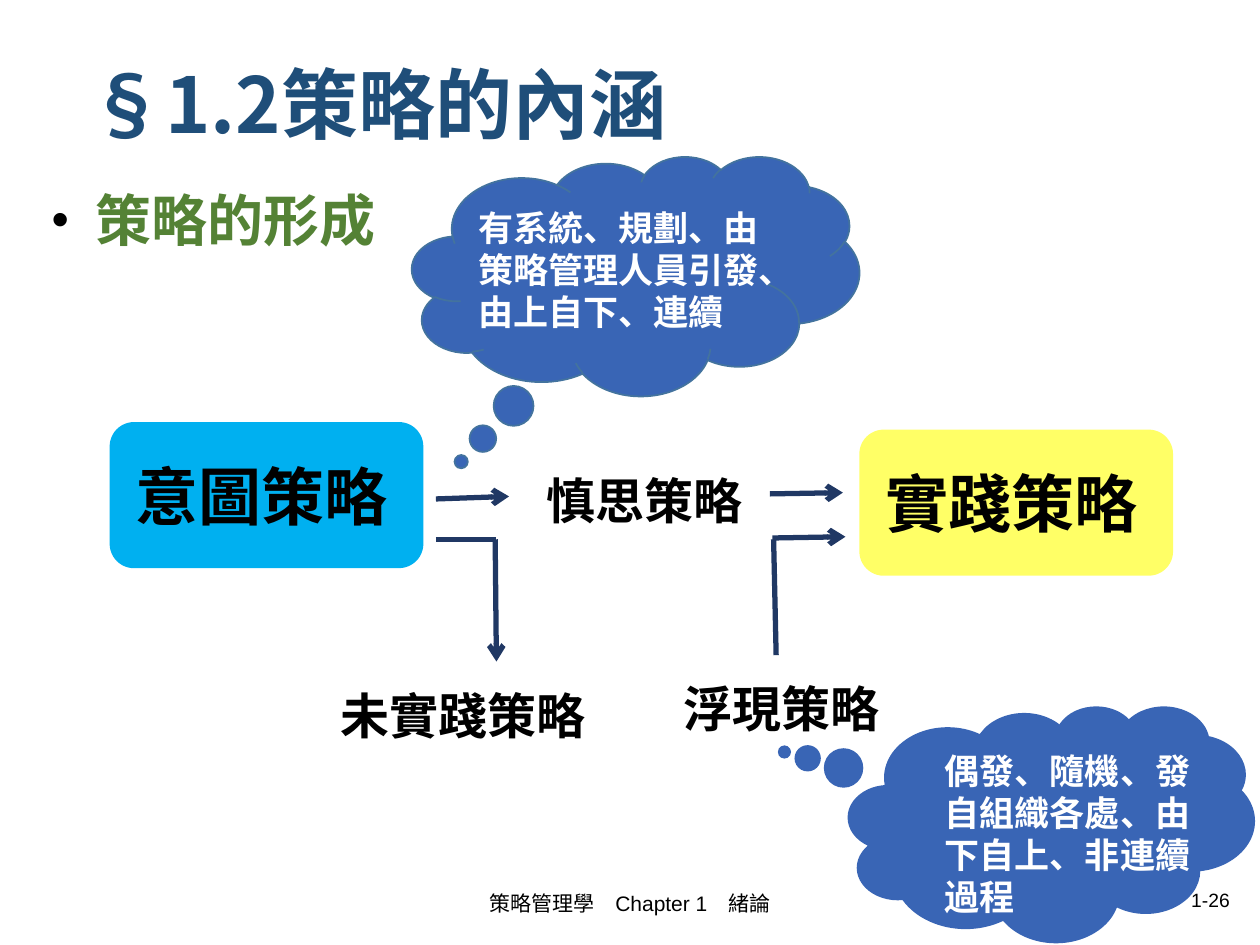
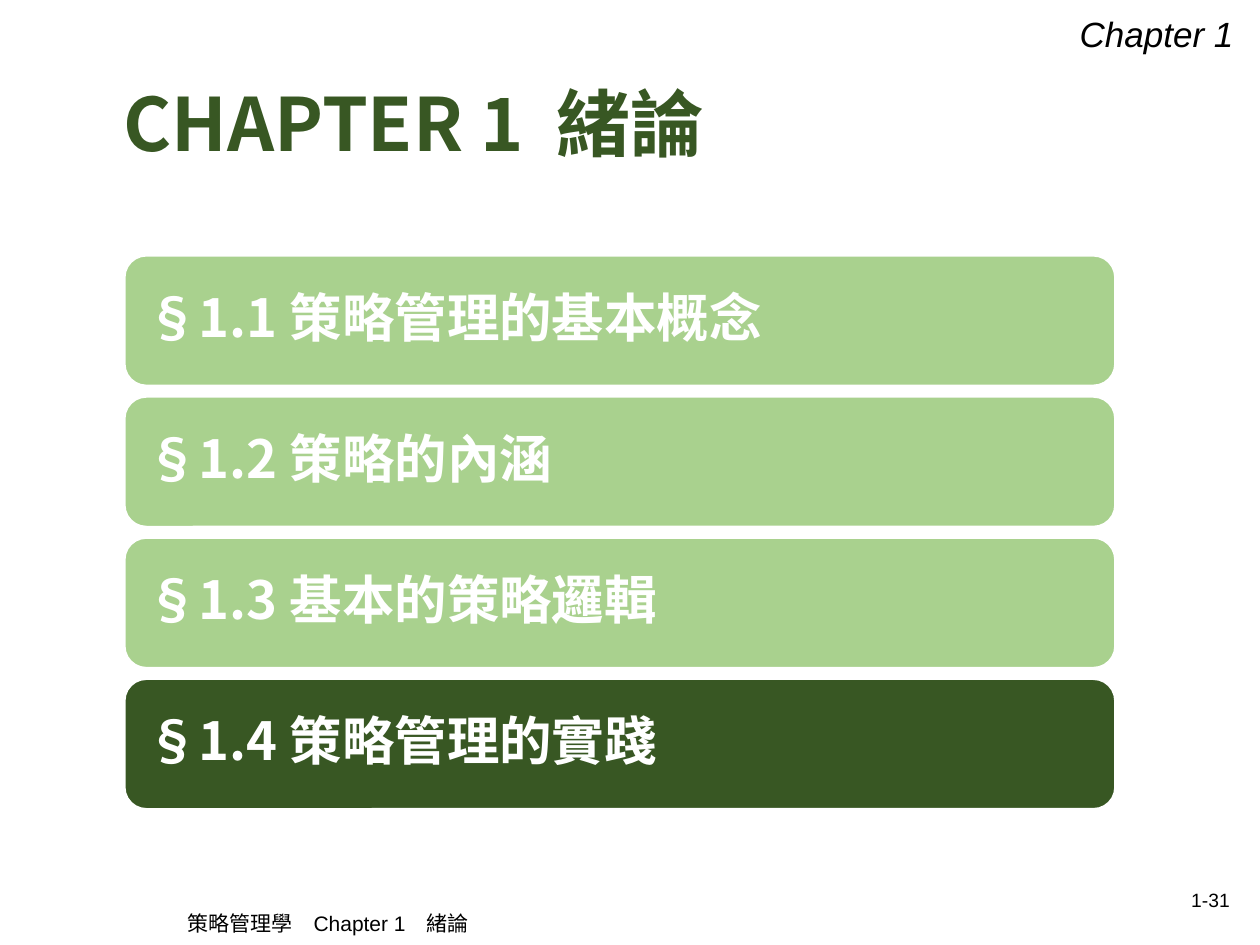
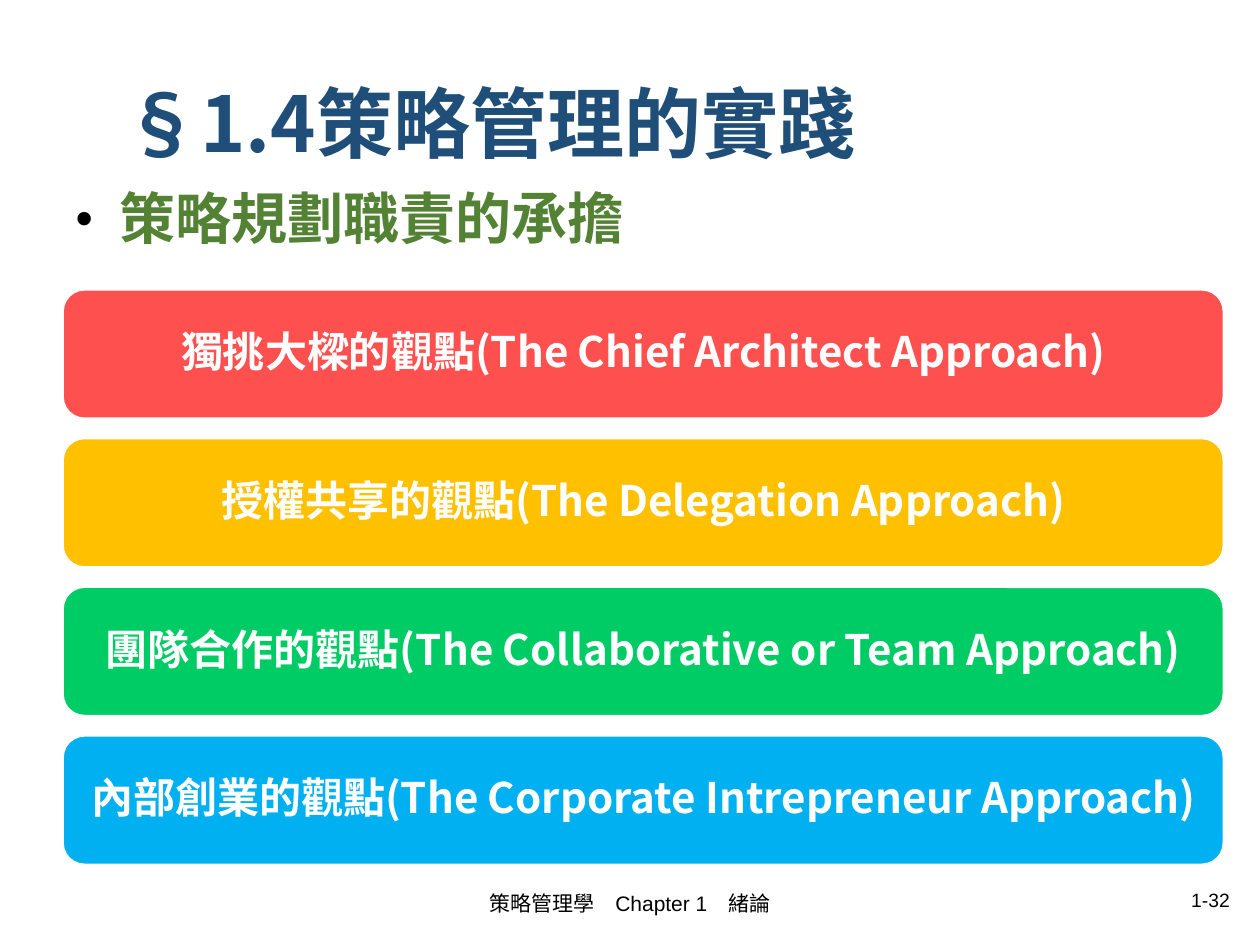
from dataclasses import dataclass

from lxml.etree import SubElement
from pptx import Presentation
from pptx.dml.color import RGBColor
from pptx.enum.shapes import MSO_CONNECTOR as Conn, MSO_SHAPE as Form
from pptx.enum.text import MSO_ANCHOR as Anchor, MSO_AUTO_SIZE as Fit, PP_ALIGN as Align
from pptx.oxml.ns import qn
from pptx.util import Inches, Pt


@dataclass(frozen=True)
class Theme:
    cjk: str = "Noto Sans CJK SC"
    latin: str = "Arial"
    navy: str = "1F4E79"
    green: str = "548235"
    forest: str = "385723"
    leaf: str = "A9D18E"
    sky: str = "00B0F0"
    lemon: str = "FFFF66"
    red: str = "FF5050"
    gold: str = "FFC000"
    mint: str = "00CC66"
    cloud: str = "3965B5"
    rim: str = "43739E"
    arrow: str = "203864"
    black: str = "000000"
    white: str = "FFFFFF"
    title: int = 44
    cover: int = 42
    key: int = 36
    topic: int = 32
    index: int = 30
    label: int = 28
    bar: int = 24
    note: int = 20
    foot: int = 12
    page: int = 11


T = Theme()
COLS, ROWS = 10, 7.5
UNIT = Inches(1)

FOOT = "策略管理學　Chapter 1　緒論"
FOOT_MID = (3.31, 6.97, 3.38, 0.4)
FOOT_LOW = (0.5, 7.16, 4.21, 0.34)
PAGE_BOX = (7.06, 6.99, 2.8, 0.3)
HEAD_BOX = (0.88, 0.6, 8.31, 0.82)

KEYS = [
    ("意圖策略", (0.87, 3.35, 2.49, 1.16), T.sky),
    ("實踐策略", (6.82, 3.41, 2.49, 1.16), T.lemon),
]
LABELS = [
    ("慎思策略", (4.16, 3.68, 1.91, 0.57)),
    ("浮現策略", (5.25, 5.33, 1.91, 0.57)),
    ("未實踐策略", (2.54, 5.39, 2.27, 0.57)),
]
LINES = [
    ((3.46, 3.96), (4.04, 3.94), True),
    ((6.11, 3.92), (6.69, 3.91), True),
    ((3.93, 4.28), (3.94, 5.25), True),
    ((3.46, 4.28), (3.94, 4.28), False),
    ((6.14, 4.28), (6.16, 5.2), False),
    ((6.13, 4.27), (6.71, 4.26), True),
]
CLOUDS = [
    ("有系統、規劃、由策略管理人員引發、由上自下、連續",
     (3.27, 1.24, 3.55, 1.9), (-0.39, 0.776), (3.7, 1.59, 2.47, 1.12), T.rim),
    ("偶發、隨機、發自組織各處、由下自上、非連續過程",
     (6.73, 5.6, 3.23, 1.88), (-0.656, -0.304), (7.4, 5.9, 2.35, 1.45), None),
]
PARTS = [
    ("§1.1 策略管理的基本概念", T.leaf),
    ("§1.2 策略的內涵", T.leaf),
    ("§1.3 基本的策略邏輯", T.leaf),
    ("§1.4 策略管理的實踐", T.forest),
]
VIEWS = [
    ("獨挑大樑的觀點(The Chief Architect Approach)", T.red),
    ("授權共享的觀點(The Delegation Approach)", T.gold),
    ("團隊合作的觀點(The Collaborative or Team Approach)", T.mint),
    ("內部創業的觀點(The Corporate Intrepreneur Approach)", T.sky),
]


def span(*cells):
    return [round(c * UNIT) for c in cells]


def rgb(code):
    return RGBColor.from_string(code)


def write(shape, text, size, color, font=T.cjk, bold=True, italic=False,
          align=Align.LEFT, anchor=Anchor.TOP, lead=None, wrap=True):
    frame = shape.text_frame
    frame.word_wrap = wrap
    frame.auto_size = Fit.NONE
    frame.vertical_anchor = anchor
    para = frame.paragraphs[0]
    para.alignment = align
    para.space_before = Pt(0)
    if lead:
        para.line_spacing = lead
    run = para.add_run()
    run.text = text
    face = run.font
    face.name, face.size, face.bold, face.italic = font, Pt(size), bold, italic
    face.color.rgb = rgb(color)
    east = SubElement(run._r.get_or_add_rPr(), qn("a:ea"))
    east.set("typeface", T.cjk)
    return para


def label(slide, box, *args, **style):
    return write(slide.shapes.add_textbox(*span(*box)), *args, **style)


def draw(slide, form, box, fill, rim=None):
    shape = slide.shapes.add_shape(form, *span(*box))
    shape.shadow.inherit = False
    shape.fill.solid()
    shape.fill.fore_color.rgb = rgb(fill)
    if rim:
        shape.line.color.rgb = rgb(rim)
        shape.line.width = Pt(1)
    else:
        shape.line.fill.background()
    return shape


def place(holder, box):
    holder.left, holder.top, holder.width, holder.height = span(*box)
    return holder


def start(deck, title, page, box=HEAD_BOX, foot=FOOT_MID, topic=None, body=None,
          size=T.title, color=T.navy):
    slide = deck.slides.add_slide(deck.slide_layouts[1 if topic else 5])
    write(place(slide.shapes.title, box), title, size, color,
          anchor=Anchor.MIDDLE, lead=0.9)
    if topic:
        para = write(place(slide.placeholders[1], body), topic, T.topic, T.green, lead=0.9)
        bullet(para)
    plain = dict(font=T.latin, bold=False, anchor=Anchor.MIDDLE)
    label(slide, foot, FOOT, T.foot, T.black, align=Align.CENTER, **plain)
    label(slide, PAGE_BOX, page, T.page, T.black, align=Align.RIGHT, **plain)
    return slide


def bullet(para):
    props = para._p.get_or_add_pPr()
    props.set("marL", str(Inches(0.35)))
    props.set("indent", str(-Inches(0.35)))
    tint = SubElement(props, qn("a:buClr"))
    SubElement(tint, qn("a:srgbClr")).set("val", T.black)
    SubElement(props, qn("a:buSzPct")).set("val", "88000")
    SubElement(props, qn("a:buFont")).set("typeface", T.latin)
    SubElement(props, qn("a:buChar")).set("char", "•")


def link(slide, tail, tip, arrow):
    line = slide.shapes.add_connector(Conn.STRAIGHT, *span(*tail, *tip))
    line.line.color.rgb = rgb(T.arrow)
    line.line.width = Pt(3)
    if arrow:
        SubElement(line.line._get_or_add_ln(), qn("a:tailEnd")).set("type", "arrow")
    SubElement(line._element.spPr, qn("a:effectLst"))


def stack(slide, items, box, step, size, align, pad):
    left, top, width, height = box
    for i, (text, fill) in enumerate(items):
        bar = draw(slide, Form.ROUNDED_RECTANGLE,
                   (left, top + i * step, width, height), fill, T.white)
        write(bar, text, size, T.white, align=align, anchor=Anchor.MIDDLE, lead=0.9)
        frame = bar.text_frame
        frame.margin_left = frame.margin_right = Inches(pad)


def forming(deck):
    slide = start(deck, "§1.2策略的內涵", "1-26", box=(0.6, 0.24, 9, 1.25),
                  topic="策略的形成", body=(0.31, 1.48, 9, 4.95))
    for text, box, fill in KEYS:
        shape = draw(slide, Form.ROUNDED_RECTANGLE, box, fill)
        write(shape, text, T.key, T.black, align=Align.CENTER, anchor=Anchor.MIDDLE)
        shape.text_frame.margin_right = Inches(0.17)
    for text, box in LABELS:
        label(slide, box, text, T.label, T.black, align=Align.CENTER,
              anchor=Anchor.MIDDLE, wrap=False)
    for line in LINES:
        link(slide, *line)
    for text, box, tip, inner, rim in CLOUDS:
        cloud = draw(slide, Form.CLOUD_CALLOUT, box, T.cloud, rim)
        for i, value in enumerate(tip):
            cloud.adjustments[i] = value
        label(slide, inner, text, T.note, T.white)


def outline(deck):
    slide = start(deck, "CHAPTER 1  緒論", "1-31", foot=FOOT_LOW,
                  size=T.cover, color=T.forest)
    label(slide, (8.47, 0.05, 1.42, 0.43), "Chapter 1", T.note, T.black,
          font=T.latin, bold=False, italic=True, wrap=False)
    stack(slide, PARTS, (0.99, 2.03, 7.86, 1.03), 1.12, T.index, Align.LEFT, 0.12)


def duties(deck):
    slide = start(deck, "§1.4策略管理的實踐", "1-32",
                  topic="策略規劃職責的承擔", body=(0.5, 1.47, 9, 4.95))
    stack(slide, VIEWS, (0.5, 2.3, 9.21, 1.02), 1.18, T.bar, Align.CENTER, 0.1)


def main():
    deck = Presentation()
    deck.slide_width, deck.slide_height = span(COLS, ROWS)
    for build in (forming, outline, duties):
        build(deck)
    deck.save("out.pptx")


if __name__ == "__main__":
    main()
